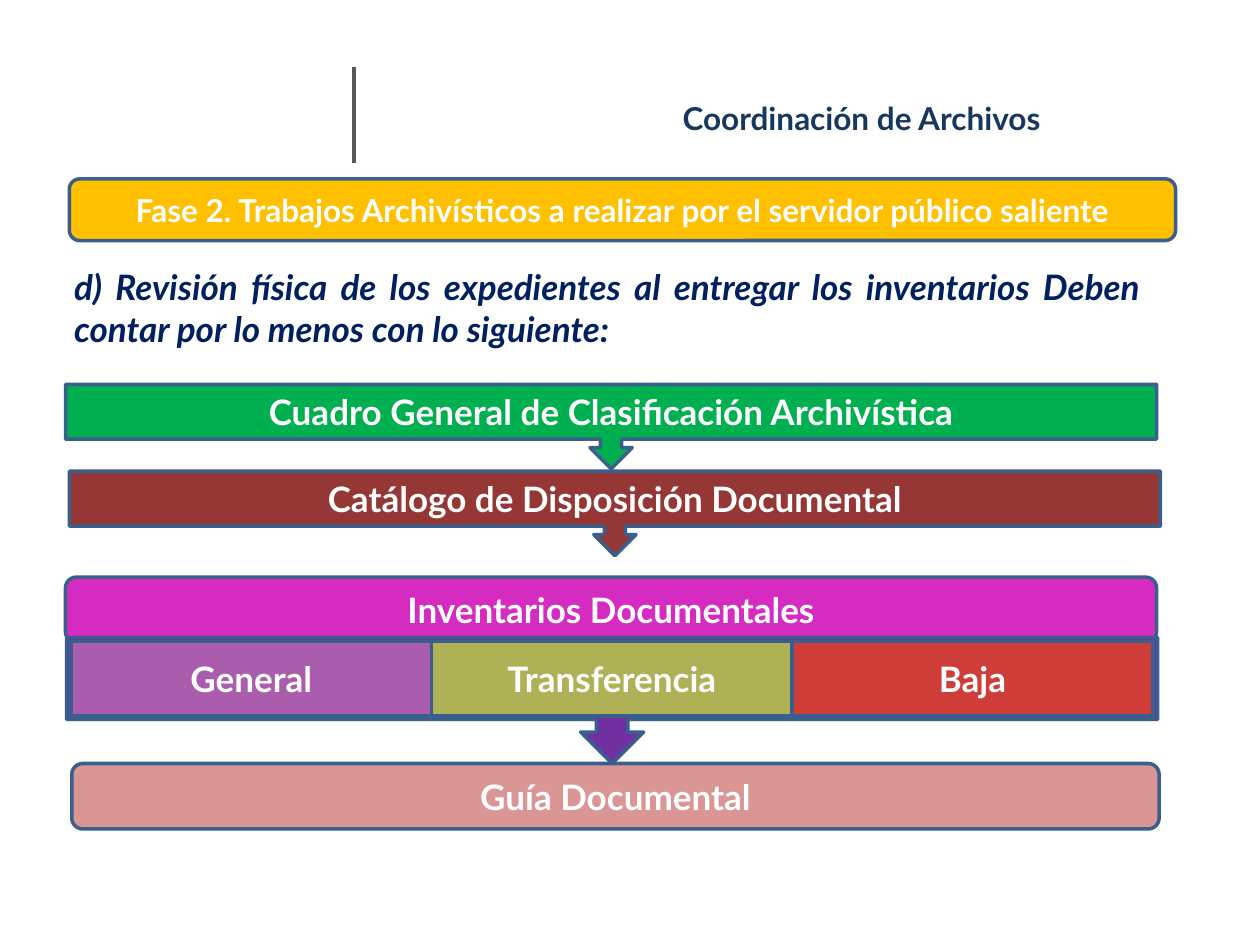
from collections import namedtuple

from lxml import etree
from pptx import Presentation
from pptx.dml.color import RGBColor
from pptx.enum.shapes import MSO_CONNECTOR, MSO_SHAPE
from pptx.enum.text import MSO_ANCHOR, MSO_AUTO_SIZE, PP_ALIGN
from pptx.oxml.ns import qn
from pptx.util import Inches, Pt

RECTANGLE = MSO_SHAPE.RECTANGLE
ROUNDED = MSO_SHAPE.ROUNDED_RECTANGLE
CALLOUT = MSO_SHAPE.DOWN_ARROW_CALLOUT
STRAIGHT = MSO_CONNECTOR.STRAIGHT
MIDDLE = MSO_ANCHOR.MIDDLE
FIT_SHAPE = MSO_AUTO_SIZE.SHAPE_TO_FIT_TEXT
LEFT, CENTER, JUSTIFY = PP_ALIGN.LEFT, PP_ALIGN.CENTER, PP_ALIGN.JUSTIFY

FONT = "Lato"
COLORS = {
    "divider": "595959",
    "heading": "17375E",
    "statement": "002060",
    "label": "FFFFFF",
    "outline": "3A5F8C",
    "phase": "FFC000",
    "classification": "00B050",
    "catalog": "953735",
    "inventories": "D52BC1",
    "inventory_arrow": "7030A0",
    "general": "AB5DAD",
    "transfer": "AFB157",
    "disposal": "CF3D39",
    "guide": "D99694",
}

Box = namedtuple("Box", "left top width height")


def color(name):
    return RGBColor.from_string(COLORS[name])


def inside(box, left, top, width, height):
    """Return the part of a box given in percent of its size."""
    return Box(
        int(box.left + box.width * left / 100),
        int(box.top + box.height * top / 100),
        int(box.width * width / 100),
        int(box.height * height / 100),
    )


def write(text_frame, text, size, color_name, alignment, italic=None):
    paragraph = text_frame.paragraphs[0]
    paragraph.text = text
    paragraph.alignment = alignment
    font = paragraph.font
    font.name, font.size, font.bold, font.italic = FONT, Pt(size), True, italic
    font.color.rgb = color(color_name)


def add_text(slide, box, text, size, color_name, alignment=LEFT, wrap=True, italic=None):
    text_frame = slide.shapes.add_textbox(*box).text_frame
    text_frame.word_wrap = wrap
    text_frame.auto_size = FIT_SHAPE
    write(text_frame, text, size, color_name, alignment, italic)


def add_block(slide, box, kind, fill, text="", size=20):
    shape = slide.shapes.add_shape(kind, *box)
    shape.shadow.inherit = False
    shape.fill.solid()
    shape.fill.fore_color.rgb = color(fill)
    shape.line.color.rgb = color("outline")
    shape.line.width = Pt(2)
    if text:
        shape.text_frame.vertical_anchor = MIDDLE
        write(shape.text_frame, text, size, "label", CENTER)


def add_header(slide, box):
    # Divider at the left edge, department name on the right
    divider = slide.shapes.add_connector(
        STRAIGHT, box.left, box.top, box.left, box.top + box.height
    )
    divider.line.color.rgb = color("divider")
    divider.line.width = Pt(2)
    etree.SubElement(divider._element.spPr, qn("a:effectLst"))
    add_text(slide, inside(box, 42.98, 27.6, 57.02, 52.6),
             "Coordinación de Archivos", 18, "heading", wrap=False)


def add_introduction(slide, box):
    # Phase banner and the statement below it
    add_block(slide, inside(box, 0.68, 0, 99.32, 34.7), ROUNDED, "phase",
              "Fase 2. Trabajos Archivísticos a realizar por el servidor público saliente", 18)
    add_text(slide, inside(box, 0, 45.4, 97.96, 54.6),
             "d) Revisión física de los expedientes al entregar los inventarios "
             "Deben contar por lo menos con lo siguiente:",
             20, "statement", JUSTIFY, italic=True)


def add_steps(slide, box):
    # Two callouts, each pointing to the next step
    steps = [
        ("classification", "Cuadro General de Clasificación Archivística"),
        ("catalog", "Catálogo de Disposición Documental"),
    ]
    for row, (fill, text) in enumerate(steps):
        part = inside(box, 0.35 * row, 51.5 * row, 99.65, 50)
        add_block(slide, part, CALLOUT, fill, text)


def add_inventories(slide, box):
    # Title, then three kinds of inventory on a downward callout
    add_block(slide, inside(box, 0, 0, 100, 35.1), ROUNDED, "inventories",
              "Inventarios Documentales")
    add_block(slide, inside(box, 0.1, 32.4, 100, 67.6), CALLOUT, "inventory_arrow")
    kinds = [("general", "General"), ("transfer", "Transferencia"), ("disposal", "Baja")]
    for column, (fill, text) in enumerate(kinds):
        part = inside(box, 0.5 + 33.05 * column, 34.5, 33.05, 39.9)
        add_block(slide, part, RECTANGLE, fill, text)


def add_guide(slide, box):
    add_block(slide, box, ROUNDED, "guide", "Guía Documental")


def main():
    presentation = Presentation()
    presentation.slide_width = Inches(10)
    presentation.slide_height = Inches(7.5)
    slide = presentation.slides.add_slide(presentation.slide_layouts[6])
    page = Box(0, 0, presentation.slide_width, presentation.slide_height)

    add_header(slide, inside(page, 28.1, 7.07, 58.4, 10.13))
    add_introduction(slide, inside(page, 4.9, 18.93, 88.4, 18.8))
    add_steps(slide, inside(page, 5.2, 40.67, 86.9, 17.87))
    add_inventories(slide, inside(page, 5.2, 61.07, 86.6, 19.73))
    add_guide(slide, inside(page, 5.7, 80.8, 86.3, 6.93))

    presentation.save("out.pptx")


if __name__ == "__main__":
    main()
